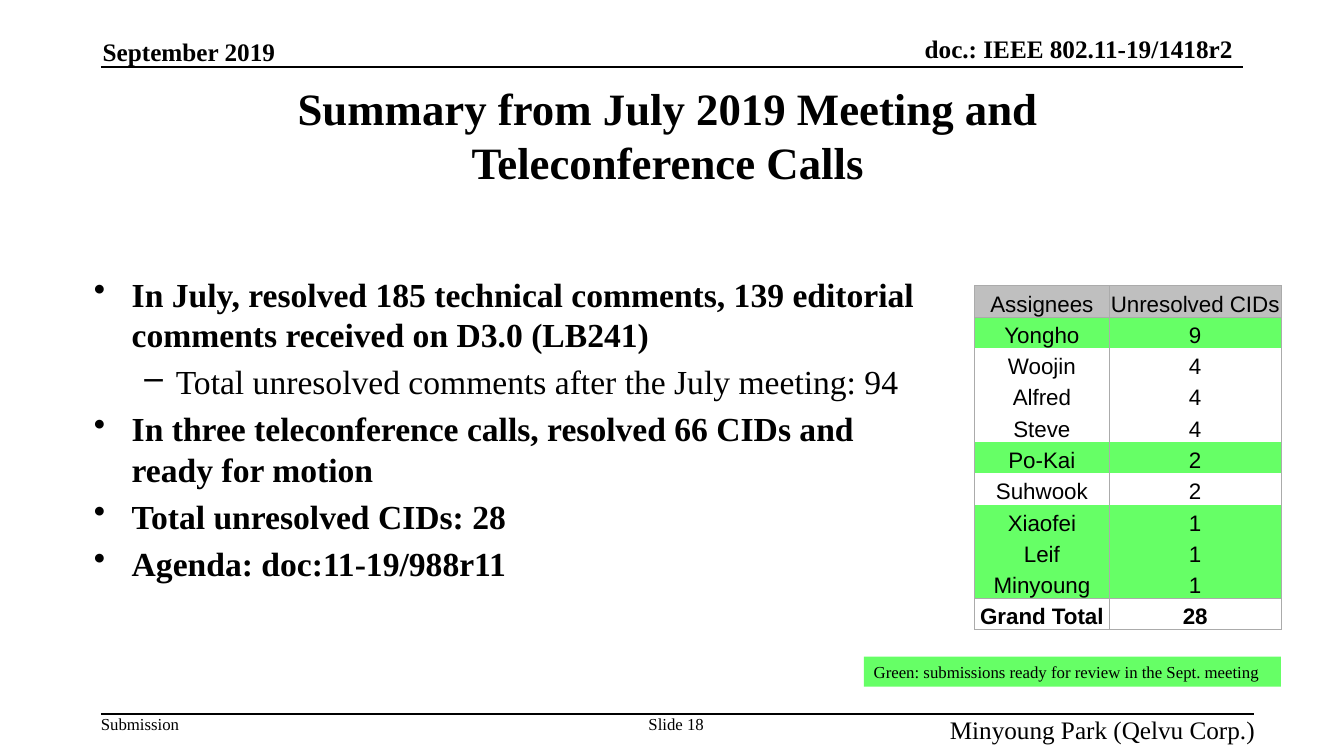
from lxml import etree
from pptx import Presentation
from pptx.dml.color import RGBColor
from pptx.enum import shapes, text
from pptx.oxml import ns
from pptx.util import Pt

COLORS = {"ink": "000000", "ready": "66FF66", "header": "BFBFBF", "grid": "ABABAB"}
SERIF, SANS = "Times New Roman", "Arial"
LEFT, CENTER, RIGHT = text.PP_ALIGN.LEFT, text.PP_ALIGN.CENTER, text.PP_ALIGN.RIGHT
TOP, MIDDLE, BOTTOM = text.MSO_ANCHOR.TOP, text.MSO_ANCHOR.MIDDLE, text.MSO_ANCHOR.BOTTOM

# Text, level
BULLETS = [
    ("In July, resolved 185 technical comments, 139 editorial comments received on D3.0 (LB241)", 0),
    ("Total unresolved comments after the July meeting: 94", 1),
    ("In three teleconference calls, resolved 66 CIDs and ready for motion", 0),
    ("Total unresolved CIDs: 28", 0),
    ("Agenda: doc:11-19/988r11", 0),
]
# Bullet sign, left margin, hanging indent by level
LEVELS = [("•", 27, -27), ("–", 58.5, -22.5)]

ASSIGNEES = [
    ("Assignees", "Unresolved CIDs"),
    ("Yongho", "9"), ("Woojin", "4"), ("Alfred", "4"), ("Steve", "4"),
    ("Po-Kai", "2"), ("Suhwook", "2"), ("Xiaofei", "1"), ("Leif", "1"),
    ("Minyoung", "1"), ("Grand Total", "28"),
]
READY = {"Yongho", "Po-Kai", "Xiaofei", "Leif", "Minyoung"}


def color(name):
    return RGBColor.from_string(COLORS[name])


def style(para, size, bold=False, align=LEFT, font=SERIF):
    para.alignment = align
    for span in para.runs:
        span.font.name = font
        span.font.size = Pt(size)
        span.font.bold = bold
        span.font.color.rgb = color("ink")


def add_text(page, area, words, size, bold=False, align=LEFT, anchor=TOP,
             inset=(0, 0), wrap=False):
    box = page.shapes.add_textbox(*map(Pt, area))
    frame = box.text_frame
    frame.word_wrap = wrap
    frame.vertical_anchor = anchor
    frame.margin_left = frame.margin_right = Pt(inset[0])
    frame.margin_top = frame.margin_bottom = Pt(inset[1])
    frame.text = words
    for para in frame.paragraphs:
        style(para, size, bold, align)
    return frame


def add_rule(page, left, right, y):
    rule = page.shapes.add_connector(
        shapes.MSO_CONNECTOR.STRAIGHT, Pt(left), Pt(y), Pt(right), Pt(y))
    rule.line.color.rgb = color("ink")
    rule.line.width = Pt(1)
    etree.SubElement(rule._element.spPr, ns.qn("a:effectLst"))


def add_bullets(page, area):
    words = "\n".join(line for line, level in BULLETS)
    frame = add_text(page, area, words, 24, inset=(7.2, 3.6), wrap=True)
    for para, (line, level) in zip(frame.paragraphs, BULLETS):
        style(para, 24, bold=level == 0)
        para.level = level
        para.space_before = Pt(4.8)
        sign, margin, indent = LEVELS[level]
        props = para._p.get_or_add_pPr()
        props.set("marL", str(Pt(margin)))
        props.set("indent", str(Pt(indent)))
        etree.SubElement(props, ns.qn("a:buChar"), char=sign)


def set_borders(cell, drawn):
    props = cell._tc.get_or_add_tcPr()
    for side in "LRTB":
        line = etree.SubElement(props, ns.qn("a:ln" + side), w=str(Pt(0.5)))
        if side in drawn:
            fill = etree.SubElement(line, ns.qn("a:solidFill"))
            etree.SubElement(fill, ns.qn("a:srgbClr"), val=COLORS["grid"])
        else:
            etree.SubElement(line, ns.qn("a:noFill"))


def add_assignee_table(page, left, top, widths, row_height):
    count = len(ASSIGNEES)
    table = page.shapes.add_table(
        count, len(widths), Pt(left), Pt(top),
        Pt(sum(widths)), Pt(row_height * count)).table
    table.first_row = table.horz_banding = False
    for column, width in zip(table.columns, widths):
        column.width = Pt(width)
    for index, values in enumerate(ASSIGNEES):
        table.rows[index].height = Pt(row_height)
        is_header, is_total = index == 0, index == count - 1
        # Only the header and total rows are ruled above and below
        drawn = "LR"
        if is_header or is_total or index == 1:
            drawn += "T"
        if is_header or is_total or index == count - 2:
            drawn += "B"
        for cell, value in zip(table.rows[index].cells, values):
            cell.text = value
            cell.vertical_anchor = BOTTOM
            cell.margin_left = cell.margin_right = cell.margin_top = Pt(0.7)
            cell.margin_bottom = Pt(0)
            style(cell.text_frame.paragraphs[0], 16, is_total, CENTER, SANS)
            set_borders(cell, drawn)
            if is_header or values[0] in READY:
                cell.fill.solid()
                cell.fill.fore_color.rgb = color("header" if is_header else "ready")
            else:
                cell.fill.background()


def add_legend(page, area, words):
    legend = page.shapes.add_shape(shapes.MSO_SHAPE.RECTANGLE, *map(Pt, area))
    legend.shadow.inherit = False
    legend.fill.solid()
    legend.fill.fore_color.rgb = color("ready")
    legend.line.fill.background()
    legend.text_frame.vertical_anchor = TOP
    legend.text_frame.text = words
    style(legend.text_frame.paragraphs[0], 12)


def main():
    deck = Presentation()
    deck.slide_width, deck.slide_height = Pt(960), Pt(540)
    page = deck.slides.add_slide(deck.slide_layouts[6])

    # Header
    add_text(page, (73.4, 26, 130, 21.6), "September 2019", 18, True, anchor=BOTTOM)
    add_text(page, (622, 23.8, 258.5, 21.6), "doc.: IEEE 802.11-19/1418r2", 18, True,
             RIGHT, BOTTOM)
    add_rule(page, 72, 888, 48)

    # Title and main points
    add_text(page, (108, 54, 738, 84),
             "Summary from July 2019 Meeting and Teleconference Calls",
             32, True, CENTER, MIDDLE, (7.2, 3.6), True)
    add_bullets(page, (60, 192, 612, 282))

    # Unresolved comments by assignee
    add_assignee_table(page, 696, 204, (96.5, 122.5), 22.36)
    add_legend(page, (617, 469, 298, 21.6),
               "Green: submissions ready for review in the Sept. meeting")

    # Footer
    add_rule(page, 72, 896, 510)
    add_text(page, (72, 510, 57, 14.4), "Submission", 12)
    add_text(page, (463, 510, 40, 14.4), "Slide 18", 12, align=CENTER)
    add_text(page, (607.7, 510, 288.7, 14.4), "Minyoung Park (Qelvu Corp.)", 18,
             align=RIGHT, wrap=True)

    deck.save("out.pptx")


if __name__ == "__main__":
    main()
